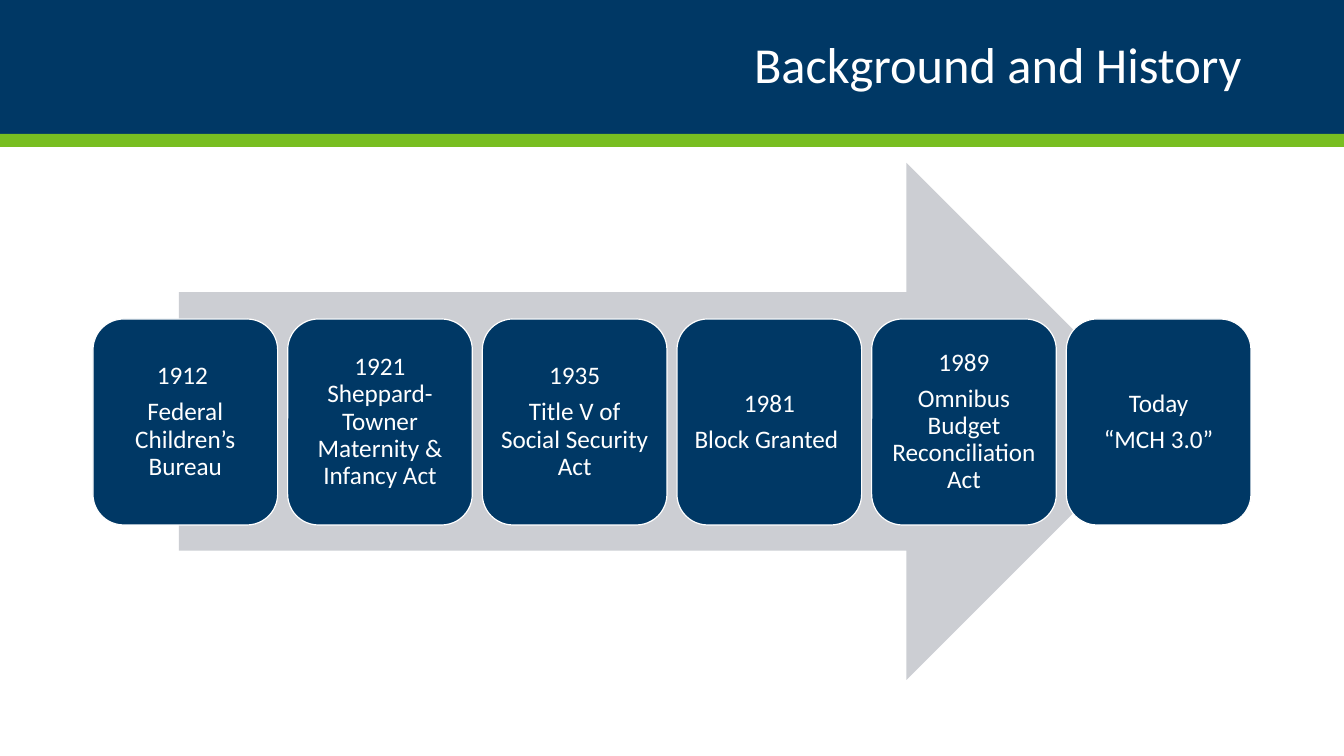
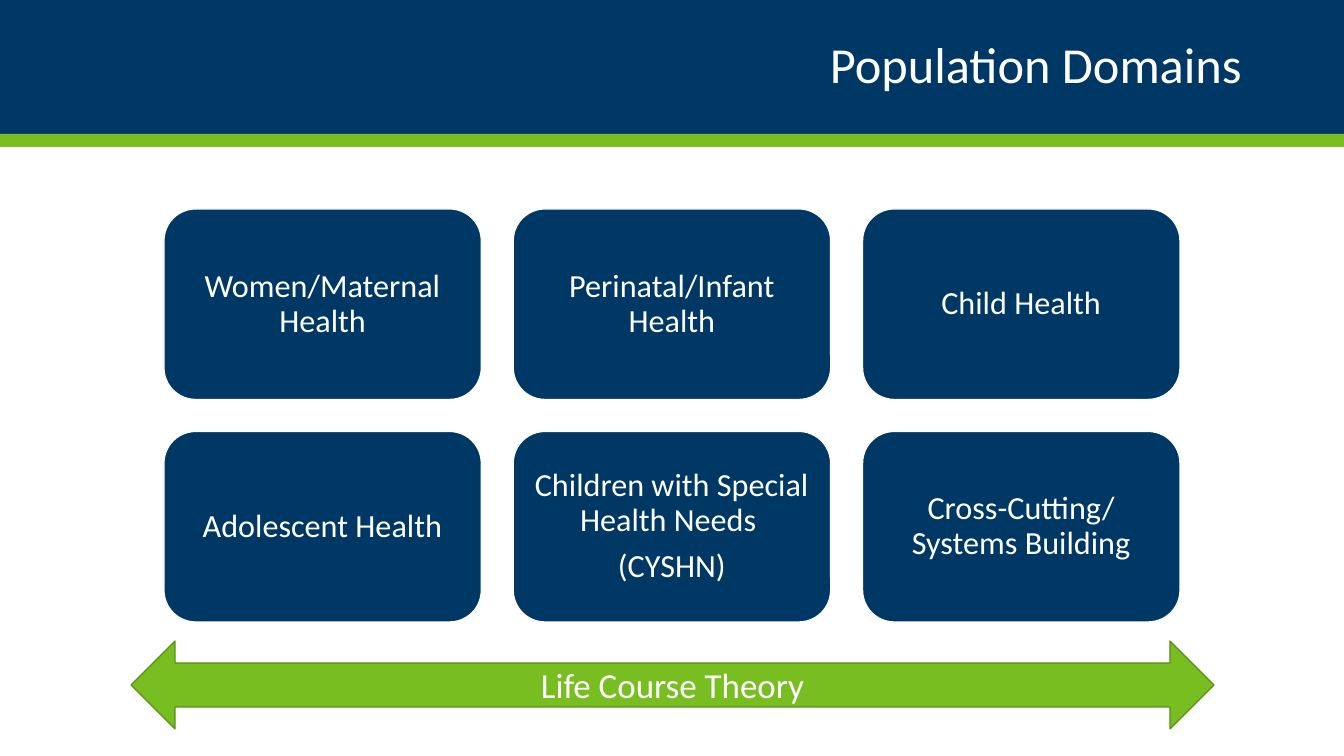
"""Build two slides on maternal and child health: a history timeline and the population domains."""
from dataclasses import dataclass

from pptx import Presentation
from pptx import util as u
from pptx.dml.color import RGBColor
from pptx.enum import shapes, text

HISTORY = [
    ["1912 ", "Federal Children’s Bureau"],
    ["1921 Sheppard-Towner Maternity & Infancy Act"],
    ["1935", "Title V of Social Security Act"],
    ["1981", "Block Granted "],
    ["1989", "Omnibus Budget Reconciliation Act"],
    ["Today", "“MCH 3.0”"],
]
DOMAINS = [
    ["Women/Maternal Health"],
    ["Perinatal/Infant Health"],
    ["Child Health"],
    ["Adolescent Health"],
    ["Children with Special Health Needs ", "(CYSHN)"],
    ["Cross-Cutting/Systems Building"],
]


@dataclass(frozen=True)
class Theme:
    font: str = "Calibri"
    navy: str = "003865"
    green: str = "78BE21"
    dark_green: str = "5A8E19"
    grey: str = "CCCED3"
    white: str = "FFFFFF"
    line: float = 0.85
    title: int = 36
    event: int = 18
    domain: int = 23
    theory: int = 25


THEME = Theme()
WIDTH, HEIGHT = 1344, 756
BAND, STRIPE = 134, 13


def px(length):
    return u.Emu(round(length * 914400 / 100.8))


def colour(value):
    return RGBColor.from_string(value)


def write(box, paragraphs, size, align=text.PP_ALIGN.CENTER, spacing=1.0, after=0, inset=None):
    frame = box.text_frame
    frame.word_wrap = True
    frame.vertical_anchor = text.MSO_ANCHOR.MIDDLE
    if inset is not None:
        frame.margin_left = frame.margin_right = px(inset)
        frame.margin_top = frame.margin_bottom = px(inset)
    for index, words in enumerate(paragraphs):
        para = frame.add_paragraph() if index else frame.paragraphs[0]
        para.alignment, para.line_spacing, para.space_after = align, spacing, u.Pt(after)
        span = para.add_run()
        span.text = words
        span.font.name, span.font.size = THEME.font, u.Pt(size)
        span.font.color.rgb = colour(THEME.white)


def add_box(page, kind, left, top, width, height, fill, line=None):
    box = page.shapes.add_shape(kind, px(left), px(top), px(width), px(height))
    box.shadow.inherit = False
    box.fill.solid()
    box.fill.fore_color.rgb = colour(fill)
    if line:
        box.line.color.rgb = colour(line)
        box.line.width = u.Pt(THEME.line)
    else:
        box.line.fill.background()
    return box


def add_cards(page, cards, columns, area, gap, size, inset):
    left, top, right, bottom = area
    rows = len(cards) // columns
    width = (right - left - gap * (columns - 1)) / columns
    height = (bottom - top - gap * (rows - 1)) / rows
    for index, paragraphs in enumerate(cards):
        row, column = divmod(index, columns)
        card = add_box(page, shapes.MSO_SHAPE.ROUNDED_RECTANGLE,
                       left + column * (width + gap), top + row * (height + gap),
                       width, height, THEME.navy, THEME.white)
        write(card, paragraphs, size, spacing=0.9, after=size * 0.35, inset=inset)


def add_page(deck, title):
    page = deck.slides.add_slide(deck.slide_layouts[5])
    heading = page.shapes.title
    heading.left, heading.top, heading.width, heading.height = map(px, (93, 17, 1159, 101))
    write(heading, [title], THEME.title, align=text.PP_ALIGN.RIGHT, spacing=0.9)
    return page


def share_bands(page):
    tree = page.slide_layout.shapes.element
    bands = [(0, BAND, THEME.navy), (BAND, STRIPE, THEME.green)]
    for index, (top, height, fill) in enumerate(bands):
        band = add_box(page, shapes.MSO_SHAPE.RECTANGLE, 0, top, WIDTH, height, fill)
        tree.insert(2 + index, band.element)


def main():
    deck = Presentation()
    deck.slide_width, deck.slide_height = px(WIDTH), px(HEIGHT)

    history = add_page(deck, "Background and History")
    share_bands(history)
    add_box(history, shapes.MSO_SHAPE.RIGHT_ARROW, 179, 163, 986, 517, THEME.grey)
    add_cards(history, HISTORY, 6, (93, 319, 1251, 525), 10, THEME.event, 7)

    domains = add_page(deck, "Population Domains")
    add_cards(domains, DOMAINS, 3, (164, 209, 1180, 622), 32, THEME.domain, 10)
    theory = add_box(domains, shapes.MSO_SHAPE.LEFT_RIGHT_ARROW, 131, 641, 1083, 88,
                     THEME.green, THEME.dark_green)
    write(theory, ["Life Course Theory"], THEME.theory)

    deck.save("out.pptx")


if __name__ == "__main__":
    main()
